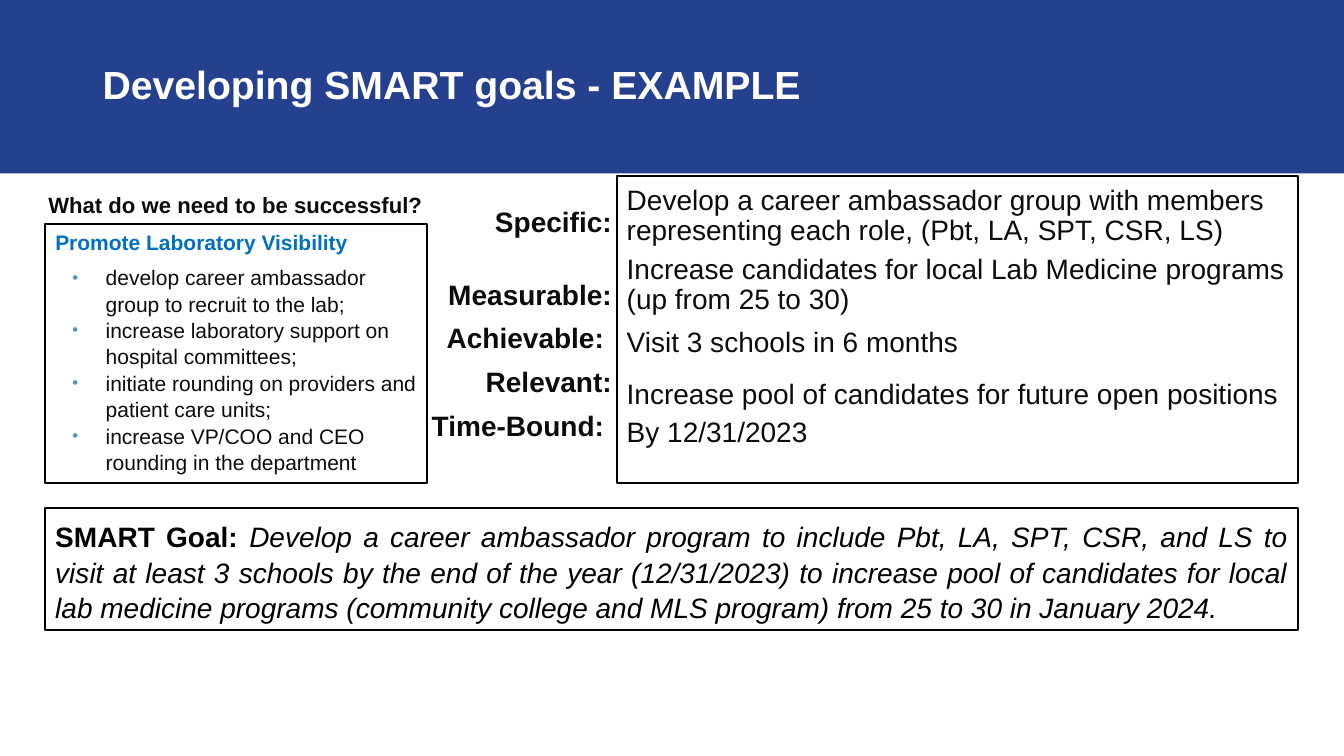
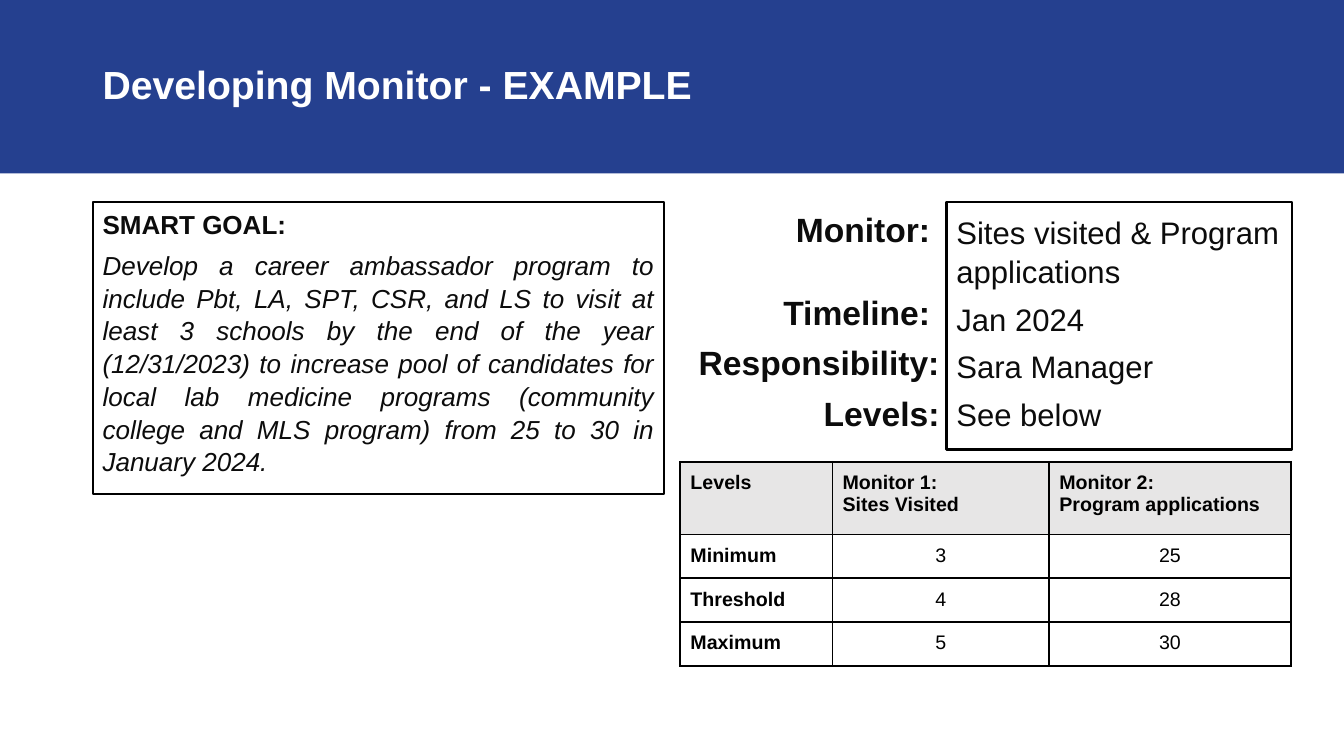
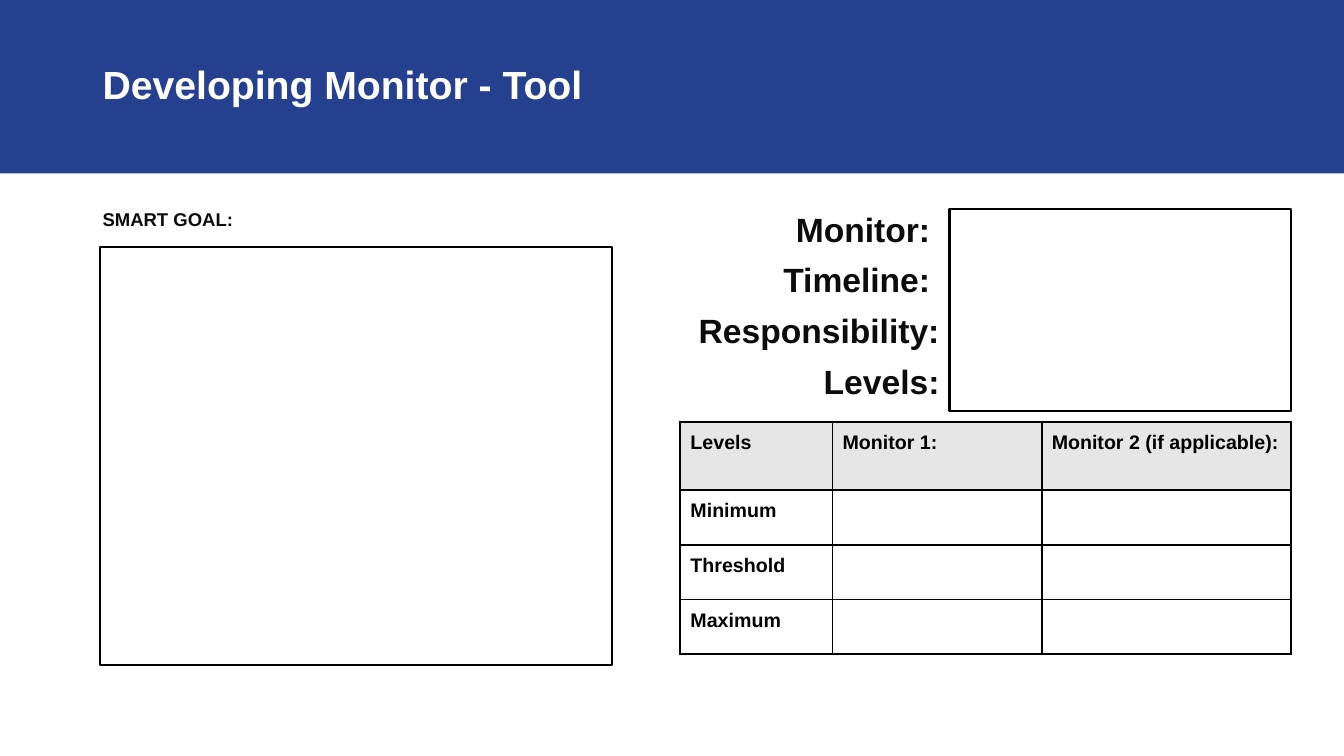
from lxml.etree import SubElement
from pptx import Presentation
from pptx.dml.color import RGBColor
from pptx.enum.shapes import MSO_SHAPE
from pptx.enum.text import MSO_ANCHOR, PP_ALIGN
from pptx.oxml.ns import qn
from pptx.util import Pt

COLORS = {"band": "25408F", "white": "FFFFFF", "black": "000000", "text": "0C0C0C",
          "heading": "0070C0", "bullet": "4696D2", "header": "E7E6E6"}
FONT = "Arial"
INSET = 7.2
THIN_INSETS = (INSET, 3.6, INSET, 3.6)
EVEN_INSETS = (INSET,) * 4
LINE = 1.5
BOLD = {"bold": True}
ITALIC = {"italic": True}
RIGHT = {"alignment": PP_ALIGN.RIGHT}
JUSTIFY = {"alignment": PP_ALIGN.JUSTIFY}
GAP = {"space_before": Pt(6)}
BULLET = {"indent": (36, -23.76), "bullet": "•"}

SMART_GOAL = ("Develop a career ambassador program to include Pbt, LA, SPT, CSR, and LS to visit at least "
              "3 schools by the end of the year (12/31/2023) to increase pool of candidates for local lab "
              "medicine programs (community college and MLS program) from 25 to 30 in January 2024.")
NEEDS_TITLE = "Promote Laboratory Visibility"
NEEDS = ["develop career ambassador group to recruit to the lab;",
         "increase laboratory support on hospital committees;",
         "initiate rounding on providers and patient care units;",
         "increase VP/COO and CEO rounding in the department"]
SMART_LABELS = [("Specific:", 1.4), ("Measurable:", 1.9), ("Achievable: ", 1.05),
                ("Relevant:", 1.05), ("Time-Bound: ", 1.05)]
SMART_ANSWERS = [
    ("Develop a career ambassador group with members representing each role, (Pbt, LA, SPT, CSR, LS)", 0.9, 0),
    ("Increase candidates for local Lab Medicine programs (up from 25 to 30)", 0.9, 6),
    ("Visit 3 schools in 6 months", 0.9, 9),
    ("Increase pool of candidates for future open positions", 1.15, 9),
    ("By 12/31/2023", 0.9, 6)]
MONITOR_LABELS = ["Monitor: ", "Timeline: ", "Responsibility: ", "Levels:"]
MONITOR_ANSWERS = ["Sites visited & Program applications", "Jan 2024", "Sara Manager", "See below"]
EXAMPLE_LEVELS = [["Levels", "Monitor 1:\nSites Visited", "Monitor 2:\nProgram applications"],
                  ["Minimum", "3", "25"], ["Threshold", "4", "28"], ["Maximum", "5", "30"]]
TOOL_LEVELS = [["Levels", "Monitor 1:", "Monitor 2 (if applicable):"],
               ["Minimum", "", ""], ["Threshold", "", ""], ["Maximum", "", ""]]


def rgb(name):
    return RGBColor.from_string(COLORS[name])


def apply(target, values):
    for name, value in values.items():
        setattr(target, name, value)


def style_run(r, size, color, **values):
    apply(r.font, {"name": FONT, "size": Pt(size), "bold": False, **values})
    r.font.color.rgb = rgb(color)


def add_bullet(pPr, char):
    SubElement(SubElement(pPr, qn("a:buClr")), qn("a:srgbClr"), val=COLORS["bullet"])
    SubElement(pPr, qn("a:buSzPct"), val="80000")
    SubElement(pPr, qn("a:buFont"), typeface=FONT)
    SubElement(pPr, qn("a:buChar"), char=char)


def add_box(slide, at, fill=None, line=None):
    sp = slide.shapes.add_shape(MSO_SHAPE.RECTANGLE, *map(Pt, at))
    sp.shadow.inherit = False
    if fill:
        sp.fill.solid()
        sp.fill.fore_color.rgb = rgb(fill)
    else:
        sp.fill.background()
    if line:
        sp.line.color.rgb = rgb(line)
        sp.line.width = Pt(LINE)
    else:
        sp.line.fill.background()
    return sp


def add_text(slide, at, paragraphs, size, color="text", insets=THIN_INSETS,
             boxed=False, anchor=MSO_ANCHOR.TOP):
    sp = add_box(slide, at, line="black") if boxed else slide.shapes.add_textbox(*map(Pt, at))
    tf = sp.text_frame
    sides = ("margin_left", "margin_top", "margin_right", "margin_bottom")
    apply(tf, {"word_wrap": True, "vertical_anchor": anchor, **dict(zip(sides, map(Pt, insets)))})
    for i, (runs, layout) in enumerate(paragraphs):
        p = tf.paragraphs[0] if i == 0 else tf.add_paragraph()
        values = {"alignment": PP_ALIGN.LEFT, "line_spacing": 1.05, "space_before": Pt(0), **layout}
        indent = values.pop("indent", None)
        bullet = values.pop("bullet", None)
        apply(p, values)
        pPr = p._p.get_or_add_pPr()
        if indent:
            for name, length in zip(("marL", "indent"), indent):
                pPr.set(name, str(Pt(length)))
        if bullet:
            add_bullet(pPr, bullet)
        for text, font in runs:
            r = p.add_run()
            r.text = text
            style_run(r, size, font.get("color", color),
                      **{k: v for k, v in font.items() if k != "color"})


def add_slide(prs, title):
    slide = prs.slides.add_slide(prs.slide_layouts[6])
    add_box(slide, (0, 0, 960, 123.8), fill="band")
    add_text(slide, (66.2, 10, 828, 104.4), [([(title, BOLD)], {"line_spacing": 0.9})],
             28, "white", anchor=MSO_ANCHOR.MIDDLE)
    return slide


def add_monitor_labels(slide, timeline_gap):
    gaps = (0, timeline_gap, 6, 6)
    add_text(slide, (486, 144, 192.2, 185.8),
             [([(label, BOLD)], {**RIGHT, "space_before": Pt(gap)})
              for label, gap in zip(MONITOR_LABELS, gaps)], 24)


def add_border(cell):
    tcPr = cell._tc.get_or_add_tcPr()
    for side in ("lnL", "lnR", "lnT", "lnB"):
        ln = SubElement(tcPr, qn(f"a:{side}"), w=str(Pt(LINE)))
        SubElement(SubElement(ln, qn("a:solidFill")), qn("a:srgbClr"), val=COLORS["black"])


def add_levels(slide, top, rows, widths, heights):
    frame = slide.shapes.add_table(len(rows), len(widths), Pt(486), Pt(top),
                                   Pt(sum(widths)), Pt(sum(heights)))
    table = frame.table
    apply(table, {"first_row": False, "horz_banding": False})
    for column, width in zip(table.columns, widths):
        column.width = Pt(width)
    for i, (row, height) in enumerate(zip(rows, heights)):
        table.rows[i].height = Pt(height)
        for j, text in enumerate(row):
            cell = table.cell(i, j)
            add_border(cell)
            apply(cell, {"margin_top": Pt(INSET), "margin_bottom": Pt(INSET),
                         "margin_left": Pt(INSET), "margin_right": Pt(INSET)})
            is_value = i > 0 and j > 0
            if i == 0:
                cell.fill.solid()
                cell.fill.fore_color.rgb = rgb("header")
            else:
                cell.fill.background()
            if text:
                cell.text = text
            for p in cell.text_frame.paragraphs:
                p.alignment = PP_ALIGN.CENTER if is_value else PP_ALIGN.LEFT
                for r in p.runs:
                    style_run(r, 14, "black", bold=not is_value)


def build_smart_goals(prs):
    slide = add_slide(prs, "Developing SMART goals - EXAMPLE")
    needs = [([(NEEDS_TITLE, {**BOLD, "color": "heading"})], {})]
    needs += [([(need, {})], {**BULLET, "space_before": Pt(0 if i else 6)})
              for i, need in enumerate(NEEDS)]
    add_text(slide, (32.4, 159.8, 272.9, 185), needs, 15, boxed=True)
    add_text(slide, (300.2, 126, 144, 208),
             [([(label, BOLD)], {**RIGHT, "indent": (90, -90), "line_spacing": spacing,
                                 "space_before": Pt(6 if i else 0)})
              for i, (label, spacing) in enumerate(SMART_LABELS)],
             20, insets=(INSET, 10.8, INSET, INSET))
    add_text(slide, (27.4, 126, 285.8, 33.8),
             [([("What do we need to be successful?", BOLD)], {"line_spacing": 1.2})],
             15.8, insets=EVEN_INSETS)
    add_text(slide, (440.6, 126, 486.7, 218.9),
             [([(answer, {})], {"line_spacing": spacing, "space_before": Pt(gap)})
              for answer, spacing, gap in SMART_ANSWERS],
             20, insets=EVEN_INSETS, boxed=True)
    add_text(slide, (32.4, 362.9, 895, 87.1),
             [([("SMART Goal: ", BOLD), (SMART_GOAL, ITALIC)], JUSTIFY)],
             20, "black", EVEN_INSETS, boxed=True)


def build_monitor_example(prs):
    slide = add_slide(prs, "Developing Monitor - EXAMPLE")
    add_text(slide, (66.2, 144, 408.2, 208.8),
             [([("SMART GOAL:", BOLD)], {}), ([(SMART_GOAL, ITALIC)], {**JUSTIFY, **GAP})],
             18.6, boxed=True)
    add_monitor_labels(slide, 29)
    add_text(slide, (676.1, 144, 247, 177.1),
             [([(answer, {})], GAP if i else {}) for i, answer in enumerate(MONITOR_ANSWERS)],
             22.2, insets=EVEN_INSETS, boxed=True)
    add_levels(slide, 329.8, EXAMPLE_LEVELS, (108.7, 154.8, 172.5), (52, 31.2, 31.2, 31.2))


def build_monitor_tool(prs):
    slide = add_slide(prs, "Developing Monitor - Tool")
    add_text(slide, (66.2, 144, 408.2, 36), [([("SMART GOAL:", BOLD)], {})], 13.2)
    add_monitor_labels(slide, 6)
    add_levels(slide, 301.2, TOOL_LEVELS, (108.7, 149.4, 177.9), (48.8, 39.1, 39.1, 39.1))
    for at in ((71.3, 176.4, 365.8, 298.8), (678.2, 149, 244.1, 144.7)):
        add_box(slide, at, line="black")


def main():
    prs = Presentation()
    apply(prs, {"slide_width": Pt(960), "slide_height": Pt(540)})
    for build in (build_smart_goals, build_monitor_example, build_monitor_tool):
        build(prs)
    prs.save("out.pptx")


if __name__ == "__main__":
    main()
